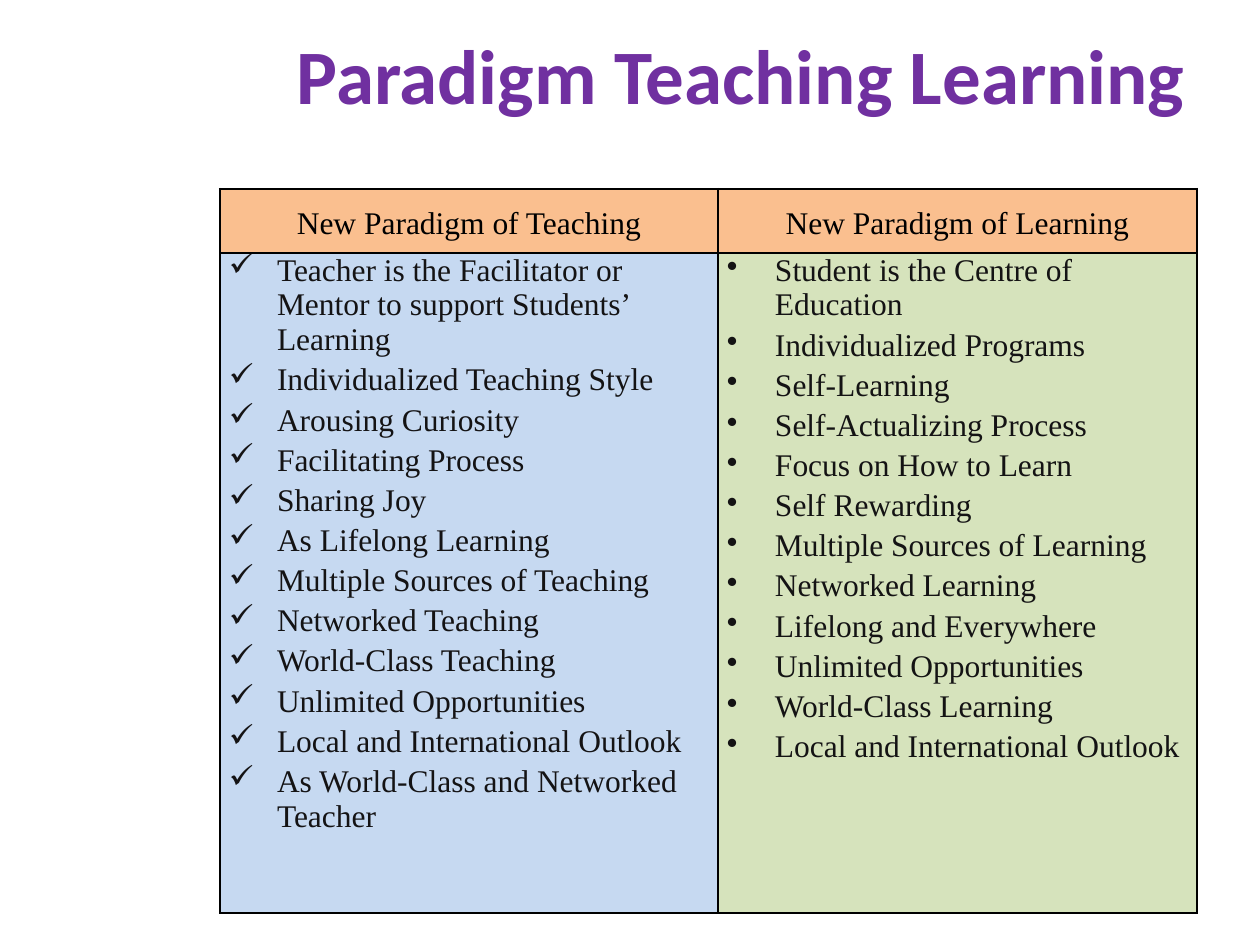
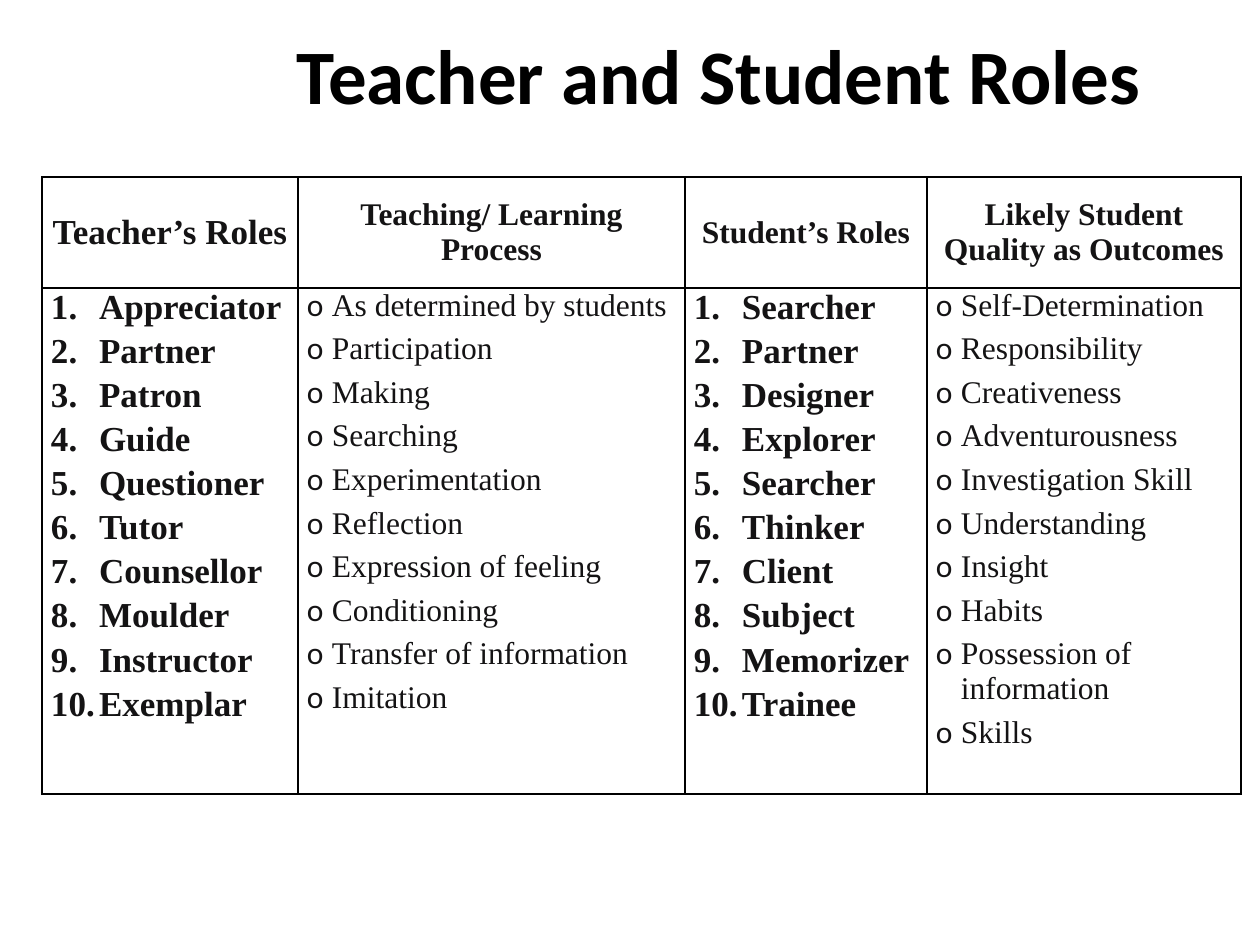
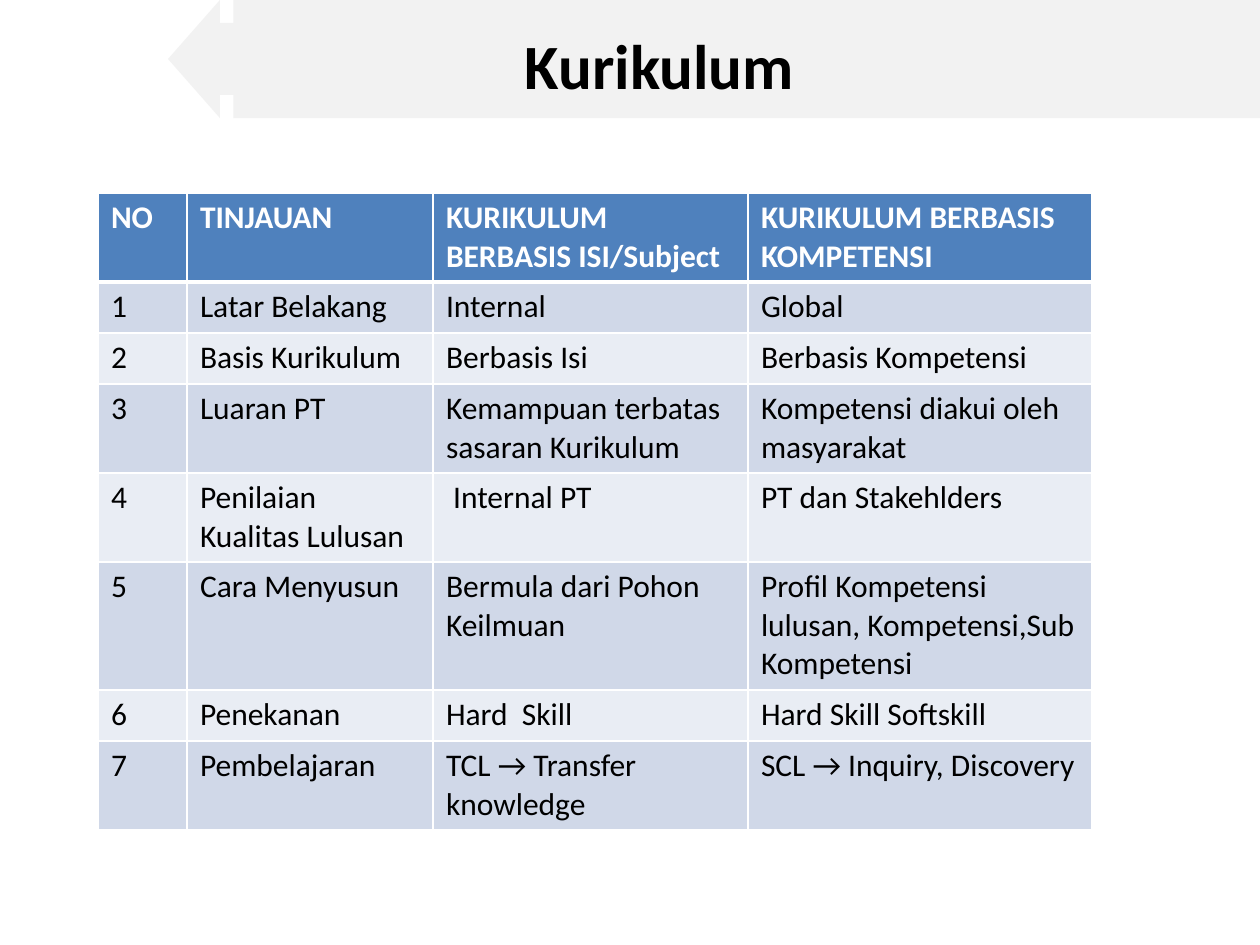
import dataclasses
import pptx
import pptx.dml.color
import pptx.enum.shapes
import pptx.enum.text
import pptx.oxml.ns
import pptx.util
import lxml.etree

ALIGN = pptx.enum.text.PP_ALIGN
ANCHOR = pptx.enum.text.MSO_ANCHOR
SHAPE = pptx.enum.shapes.MSO_SHAPE


@dataclasses.dataclass(frozen=True)
class Theme:
    # Colours
    black: str = "000000"
    white: str = "FFFFFF"
    ink: str = "141314"
    purple: str = "7030A0"
    peach: str = "FABF8F"
    sky: str = "C6D9F1"
    leaf: str = "D6E3BC"
    band: str = "F2F2F2"
    blue: str = "4F81BD"
    stripes: tuple = ("D0D8E8", "E9EDF4")
    # Fonts and sizes
    sans: str = "Calibri"
    serif: str = "Times New Roman"
    title: int = 44
    small_title: int = 36
    large: int = 20
    body: int = 18


THEME = Theme()


@dataclasses.dataclass(frozen=True)
class Look:
    colour: str = THEME.ink
    font: str = THEME.serif
    size: int = THEME.body
    bold: bool = False
    align: object = ALIGN.LEFT
    anchor: object = ANCHOR.TOP
    bullet: str = ""
    indent: int = 0
    gap: int = 0
    spacing: float = 1.0


@dataclasses.dataclass(frozen=True)
class Grid:
    colour: str = THEME.black
    head: float = 1
    seam: float = 1
    body: float = 1
    inset: tuple = (9, 0)


def px(count):
    return pptx.util.Inches(count / 126)


def rgb(code):
    return pptx.dml.color.RGBColor.from_string(code)


def add(parent, tag, **values):
    node = lxml.etree.SubElement(parent, pptx.oxml.ns.qn(tag))
    for key, value in values.items():
        node.set(key, str(value))
    return node


class Deck:
    def __init__(self, theme):
        self.theme = theme
        self.show = pptx.Presentation()
        self.show.slide_width = px(1260)
        self.show.slide_height = px(945)
        self.slide = None

    def start(self):
        self.slide = self.show.slides.add_slide(self.show.slide_layouts[5])

    def style(self, frame, look):
        for index, para in enumerate(frame.paragraphs):
            if look.bullet:
                self.bullet(para, look)
            para.alignment = look.align
            para.line_spacing = look.spacing
            if index:
                para.space_before = pptx.util.Pt(look.gap)
            for run in para.runs:
                font = run.font
                font.name, font.bold = look.font, look.bold
                font.size = pptx.util.Pt(look.size)
                font.color.rgb = rgb(look.colour)

    def bullet(self, para, look):
        props = para._p.get_or_add_pPr()
        props.set("marL", str(px(look.indent)))
        props.set("indent", str(-px(look.indent)))
        if look.bullet == "1.":
            add(props, "a:buAutoNum", type="arabicPeriod")
        else:
            if look.bullet == "o":
                add(props, "a:buFont", typeface=self.theme.sans)
            add(props, "a:buChar", char=look.bullet)

    def title(self, text, box, look, wrap=False):
        holder = self.slide.shapes.title
        holder.left, holder.top, holder.width, holder.height = map(px, box)
        frame = holder.text_frame
        frame.text = text
        frame.auto_size = pptx.enum.text.MSO_AUTO_SIZE.NONE
        frame.word_wrap = wrap
        frame.vertical_anchor = look.anchor
        self.style(frame, look)

    def banner(self, box, ratios):
        shape = self.slide.shapes.add_shape(SHAPE.LEFT_ARROW_CALLOUT, *map(px, box))
        shape.shadow.inherit = False
        shape.fill.solid()
        shape.fill.fore_color.rgb = rgb(self.theme.band)
        shape.line.fill.background()
        for index, ratio in enumerate(ratios):
            shape.adjustments[index] = ratio
        # The band lies behind the title
        self.slide.shapes.title.element.addprevious(shape.element)

    def border(self, cell, colour, widths):
        props = cell._tc.get_or_add_tcPr()
        for side, width in zip("LRTB", widths):
            line = add(props, f"a:ln{side}", w=pptx.util.Pt(width))
            add(add(line, "a:solidFill"), "a:srgbClr", val=colour)

    def cell(self, cell, text, look, fill, inset):
        cell.text_frame.text = text
        cell.vertical_anchor = look.anchor
        cell.margin_left = cell.margin_right = px(inset[0])
        cell.margin_top = cell.margin_bottom = px(inset[1])
        if fill:
            cell.fill.solid()
            cell.fill.fore_color.rgb = rgb(fill)
        else:
            cell.fill.background()
        self.style(cell.text_frame, look)

    def table(self, spot, widths, heights, rows, grid):
        """Each cell in rows is a (text, look, fill) triple."""
        box = (*spot, sum(widths), sum(heights))
        table = self.slide.shapes.add_table(
            len(heights), len(widths), *map(px, box)).table
        table.horz_banding = False
        for column, width in zip(table.columns, widths):
            column.width = px(width)
        for index, (height, row) in enumerate(zip(heights, rows)):
            table.rows[index].height = px(height)
            side = grid.body if index else grid.head
            top = grid.seam if index == 1 else side
            base = grid.body if index else grid.seam
            for place, content in enumerate(row):
                cell = table.cell(index, place)
                self.border(cell, grid.colour, (side, side, top, base))
                self.cell(cell, *content, grid.inset)


HEADING = Look(THEME.black, THEME.sans, THEME.title, True)
TICKS = Look(bullet="✓", indent=48, gap=3)
DOTS = dataclasses.replace(TICKS, bullet="•")
NUMBERS = Look(size=THEME.large, bold=True, bullet="1.", indent=48, gap=3)
RINGS = Look(bullet="o", indent=25, gap=5)

TEACHING = """Teacher is the Facilitator or Mentor to support Students’ Learning
Individualized Teaching Style
Arousing Curiosity
Facilitating Process
Sharing Joy
As Lifelong Learning
Multiple Sources of Teaching
Networked Teaching
World-Class Teaching
Unlimited Opportunities
Local and International Outlook
As World-Class and Networked Teacher"""

LEARNING = """Student is the Centre of Education
Individualized Programs
Self-Learning
Self-Actualizing Process
Focus on How to Learn
Self Rewarding
Multiple Sources of Learning
Networked Learning
Lifelong and Everywhere
Unlimited Opportunities
World-Class Learning
Local and International Outlook"""

ROLES = [
    ("Appreciator", "As determined by students", "Searcher", "Self-Determination"),
    ("Partner", "Participation", "Partner", "Responsibility"),
    ("Patron", "Making", "Designer", "Creativeness"),
    ("Guide", "Searching", "Explorer", "Adventurousness"),
    ("Questioner", "Experimentation", "Searcher", "Investigation Skill"),
    ("Tutor", "Reflection", "Thinker", "Understanding"),
    ("Counsellor", "Expression of feeling", "Client", "Insight"),
    ("Moulder", "Conditioning", "Subject", "Habits"),
    ("Instructor", "Transfer of information", "Memorizer", "Possession of information"),
    ("Exemplar", "Imitation", "Trainee", "Skills"),
]

COURSE = [
    ("NO", "TINJAUAN", "KURIKULUM BERBASIS ISI/Subject", "KURIKULUM BERBASIS KOMPETENSI"),
    ("1", "Latar Belakang", "Internal", "Global"),
    ("2", "Basis Kurikulum", "Berbasis Isi", "Berbasis Kompetensi"),
    ("3", "Luaran PT", "Kemampuan terbatas sasaran Kurikulum",
     "Kompetensi diakui oleh masyarakat"),
    ("4", "Penilaian Kualitas Lulusan", " Internal PT", "PT dan Stakehlders"),
    ("5", "Cara Menyusun", "Bermula dari Pohon Keilmuan",
     "Profil Kompetensi lulusan, Kompetensi,Sub Kompetensi"),
    ("6", "Penekanan", "Hard  Skill", "Hard Skill Softskill"),
    ("7", "Pembelajaran", "TCL → Transfer knowledge", "SCL → Inquiry, Discovery"),
]


def paradigm(deck):
    theme = deck.theme
    deck.start()
    deck.title("Paradigm Teaching Learning", (284, 21, 922, 106),
               dataclasses.replace(HEADING, colour=theme.purple))
    head = Look(theme.black, align=ALIGN.CENTER, spacing=1.5)
    rows = [
        [("New Paradigm of Teaching", head, theme.peach),
         ("New Paradigm of Learning", head, theme.peach)],
        [(TEACHING, TICKS, theme.sky), (LEARNING, DOTS, theme.leaf)],
    ]
    deck.table((220, 189), (498, 479), (64, 660), rows, Grid(head=1.5, seam=1.5))


def roles(deck):
    deck.start()
    deck.title("Teacher and Student Roles", (284, 21, 878, 106), HEADING)
    head = Look(bold=True, align=ALIGN.CENTER, anchor=ANCHOR.MIDDLE)
    large = dataclasses.replace(head, size=deck.theme.large)
    names = ("Teacher’s Roles", "Teaching/ Learning Process",
             "Student’s Roles", "Likely Student Quality as Outcomes")
    justified = dataclasses.replace(NUMBERS, align=ALIGN.JUSTIFY)
    looks = (NUMBERS, RINGS, justified, RINGS)
    rows = [
        [(name, look, None) for name, look in zip(names, (large, head, head, head))],
        [("\n".join(items), look, None) for items, look in zip(zip(*ROLES), looks)],
    ]
    deck.table((42, 177), (256, 387, 242, 314), (111, 506), rows, Grid())


def course(deck):
    theme = deck.theme
    deck.start()
    deck.title("Kurikulum", (236, 0, 847, 129),
               dataclasses.replace(HEADING, size=theme.small_title,
                                   align=ALIGN.CENTER, anchor=ANCHOR.MIDDLE), True)
    deck.banner((168, 0, 1092, 118), (0.61, 0.5, 0.44, 0.94))
    head = Look(theme.white, theme.sans, bold=True)
    body = Look(theme.black, theme.sans)
    rows = [[(text, head, theme.blue) for text in COURSE[0]]]
    for index, line in enumerate(COURSE[1:]):
        rows.append([(text, body, theme.stripes[index % 2]) for text in line])
    deck.table((98, 193), (89, 246, 315, 344), (89, 51, 51, 89, 89, 128, 51, 89),
               rows, Grid(theme.white, seam=3, inset=(13, 6)))


def main():
    deck = Deck(THEME)
    for build in (paradigm, roles, course):
        build(deck)
    deck.show.save("out.pptx")


if __name__ == "__main__":
    main()
